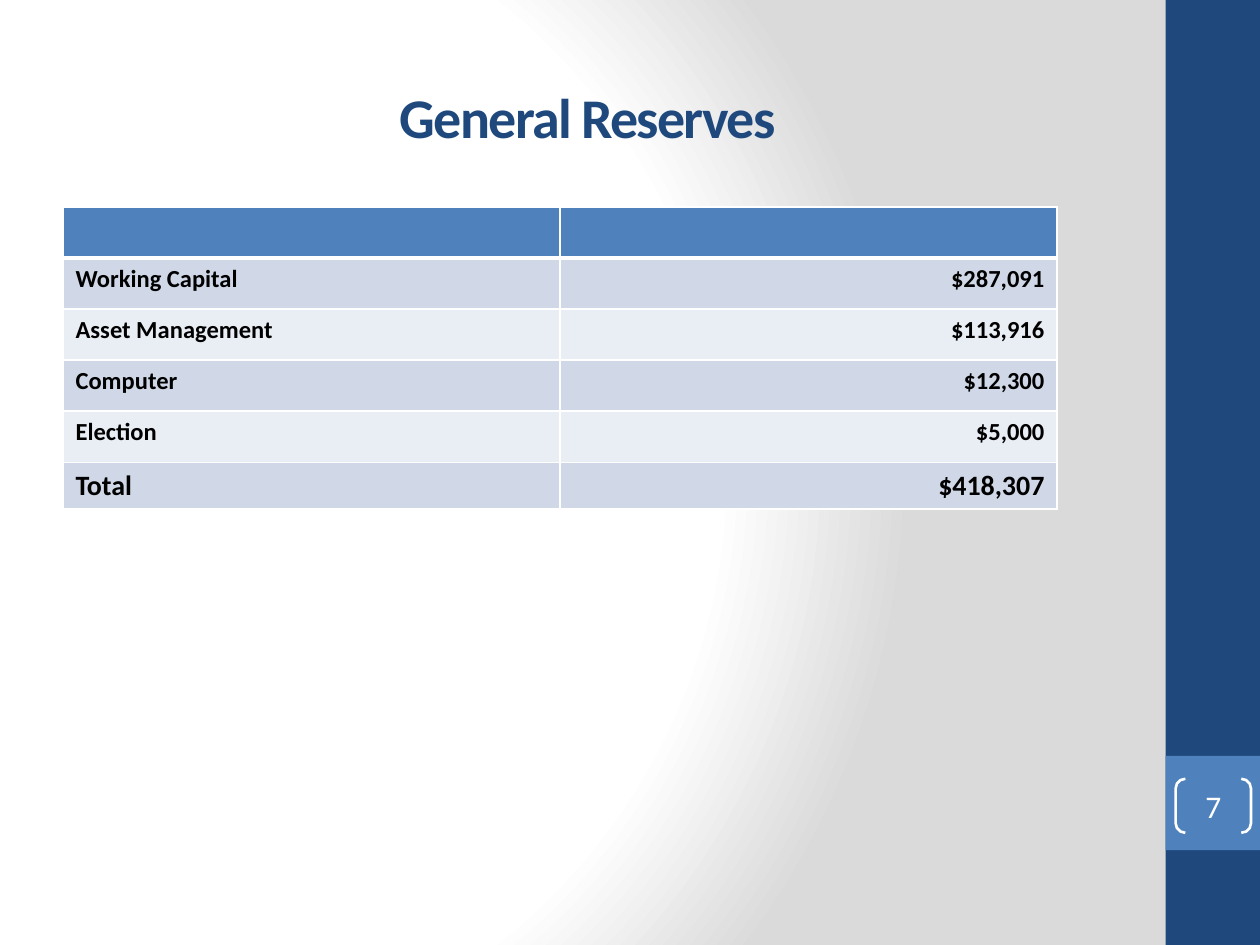
"""Build the General Reserves slide."""
from pptx import Presentation
from pptx.dml.color import RGBColor
from pptx.enum import shapes, text
from pptx.oxml import parse_xml
from pptx.oxml.ns import nsdecls
from pptx.util import Cm, Pt

FONT = "Calibri"
NAVY = RGBColor(0x1F, 0x49, 0x7D)
BLUE = RGBColor(0x4F, 0x81, 0xBD)
BAND_DARK = RGBColor(0xD0, 0xD8, 0xE8)
BAND_LIGHT = RGBColor(0xE9, 0xED, 0xF4)
WHITE = RGBColor(0xFF, 0xFF, 0xFF)
BLACK = RGBColor(0, 0, 0)
GREY = RGBColor(0xDA, 0xDA, 0xDA)

RESERVES = [
    ("", ""),
    ("Working Capital", "$287,091"),
    ("Asset Management", "$113,916"),
    ("Computer", "$12,300"),
    ("Election", "$5,000"),
    ("Total", "$418,307"),
]


def set_background(slide):
    """Give the slide a radial white to grey background."""
    stops = "".join(
        f'<a:gs pos="{position * 1000}"><a:srgbClr val="{color}"/></a:gs>'
        for position, color in ((0, WHITE), (75, WHITE), (100, GREY))
    )
    background = parse_xml(
        f'<p:bg {nsdecls("p", "a")}><p:bgPr><a:gradFill rotWithShape="1">'
        f'<a:gsLst>{stops}</a:gsLst><a:path path="circle">'
        '<a:fillToRect l="20000" t="50000" r="100000" b="50000"/></a:path>'
        "</a:gradFill><a:effectLst/></p:bgPr></p:bg>"
    )
    slide.element.cSld.insert(0, background)


def add_run(paragraph, words, size, color, bold=False):
    """Add one formatted run and return it."""
    run = paragraph.add_run()
    run.text = words
    run.font.name = FONT
    run.font.size = Pt(size)
    run.font.bold = bold
    run.font.color.rgb = color
    return run


def add_block(slide, top, height, color):
    """Add a plain rectangle to the right-hand strip."""
    shape = slide.shapes.add_shape(
        shapes.MSO_SHAPE.RECTANGLE, Cm(23.5), Cm(top), Cm(1.9), Cm(height)
    )
    shape.shadow.inherit = False
    shape.fill.solid()
    shape.fill.fore_color.rgb = color
    shape.line.fill.background()


def fill_title(slide, words):
    """Place and format the slide title."""
    title = slide.shapes.title
    title.left, title.top = Cm(1.27), Cm(0.76)
    title.width, title.height = Cm(21.16), Cm(3.18)
    title.text_frame.vertical_anchor = text.MSO_ANCHOR.MIDDLE
    paragraph = title.text_frame.paragraphs[0]
    paragraph.alignment = text.PP_ALIGN.CENTER
    run = add_run(paragraph, words, 32, NAVY, bold=True)
    run.font._element.set("spc", "-100")


def set_borders(cell, top, bottom):
    """Draw white cell borders, with top and bottom widths in points."""
    properties = cell._tc.get_or_add_tcPr()
    widths = (("L", 1), ("R", 1), ("T", top), ("B", bottom))
    for index, (side, width) in enumerate(widths):
        border = parse_xml(
            f'<a:ln{side} {nsdecls("a")} w="{Pt(width)}"><a:solidFill>'
            f'<a:srgbClr val="{WHITE}"/></a:solidFill></a:ln{side}>'
        )
        properties.insert(index, border)


def add_reserves_table(slide):
    """Add the banded table of reserves."""
    frame = slide.shapes.add_table(
        len(RESERVES), 2, Cm(1.27), Cm(4.17), Cm(20.04), Cm(5.95)
    )
    table = frame.table
    last = len(RESERVES) - 1
    for row, values in enumerate(RESERVES):
        table.rows[row].height = Cm(0.74 if row == last else 1.03)
        band = BLUE if row == 0 else BAND_DARK if row % 2 else BAND_LIGHT
        for column, words in enumerate(values):
            cell = table.cell(row, column)
            cell.fill.solid()
            cell.fill.fore_color.rgb = band
            set_borders(cell, 3 if row == 1 else 1, 3 if row == 0 else 1)
            if words:
                paragraph = cell.text_frame.paragraphs[0]
                if column:
                    paragraph.alignment = text.PP_ALIGN.RIGHT
                add_run(paragraph, words, 16 if row == last else 14, BLACK, bold=True)


def add_page_number(slide, number):
    """Add the page number between brackets."""
    shape = slide.shapes.add_shape(
        shapes.MSO_SHAPE.DOUBLE_BRACKET, Cm(23.7), Cm(15.7), Cm(1.52), Cm(1.09)
    )
    shape.adjustments[0] = 0.18
    shape.shadow.inherit = False
    shape.fill.background()
    shape.line.color.rgb = WHITE
    shape.line.width = Pt(1.5)
    frame = shape.text_frame
    frame.margin_left = frame.margin_right = Cm(0)
    frame.margin_top = frame.margin_bottom = Cm(0)
    frame.vertical_anchor = text.MSO_ANCHOR.MIDDLE
    paragraph = frame.paragraphs[0]
    paragraph.alignment = text.PP_ALIGN.CENTER
    add_run(paragraph, number, 18, WHITE)


def main():
    """Build and save the slide."""
    presentation = Presentation()
    presentation.slide_width = Cm(25.4)
    presentation.slide_height = Cm(19.05)
    slide = presentation.slides.add_slide(presentation.slide_layouts[5])
    set_background(slide)
    add_block(slide, 0, 19.05, NAVY)
    add_block(slide, 15.24, 1.9, BLUE)
    fill_title(slide, "General Reserves")
    add_reserves_table(slide)
    add_page_number(slide, "7")
    presentation.save("out.pptx")


if __name__ == "__main__":
    main()
